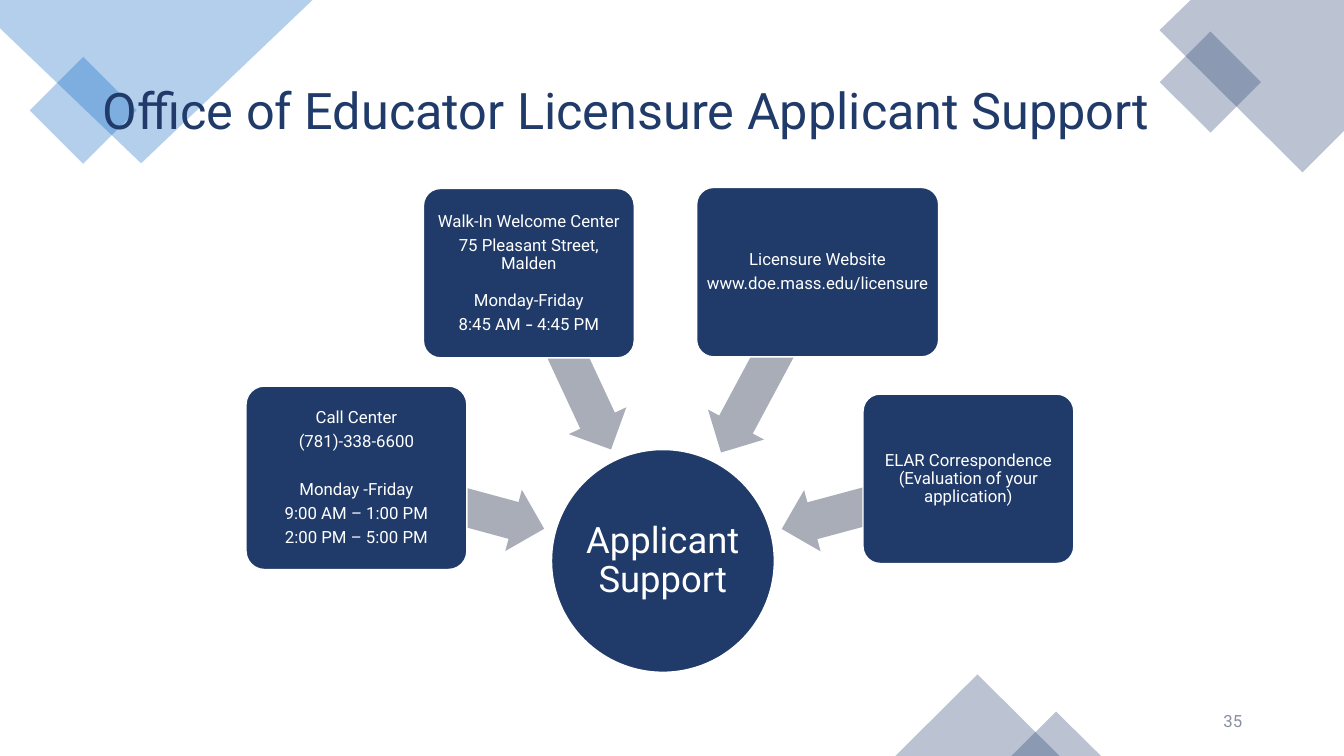
import math

from lxml import etree
from pptx import Presentation
from pptx import util as u
from pptx.dml.color import RGBColor
from pptx.enum import shapes, text
from pptx.oxml.ns import qn

SLIDE_W, SLIDE_H = 13.33, 7.5
NAVY, BLUE, GREY, WHITE, PAGE_GREY = "203B69", "0563C1", "A9ADB8", "FFFFFF", "8A8FA0"
TITLE_NAVY = "203B6A"
LINE_GAP, GROUP_GAP, STREET_GAP = 4.2, 21.3, 13.2  # points before a paragraph

TITLE = "Office of Educator Licensure Applicant Support"
PAGE_NUMBER = "35"
HUB = ("Applicant Support", (5.47, 4.46, 2.21, 2.21))
ARROW_HEIGHT, ARROW_STOP = 0.63, 1.22  # arrows stop this far from the hub's centre

# Each channel: place, then paragraphs of (space before, text)
CHANNELS = [
    ((2.44, 3.83, 2.19, 1.82), [
        (0, "Call Center"), (LINE_GAP, "(781)-338-6600"),
        (GROUP_GAP, "Monday -Friday"), (LINE_GAP, "9:00 AM – 1:00 PM"),
        (LINE_GAP, "2:00 PM – 5:00 PM")]),
    ((4.2, 1.87, 2.09, 1.68), [
        (0, "Walk-In Welcome Center"), (LINE_GAP, "75 Pleasant Street, Malden"),
        (STREET_GAP, "Monday-Friday"), (LINE_GAP, ("8:45 AM ", "– ", "4:45 PM"))]),
    ((6.91, 1.86, 2.4, 1.68), [
        (0, "Licensure Website"), (LINE_GAP, "www.doe.mass.edu/licensure")]),
    ((8.56, 3.91, 2.09, 1.68), [
        (0, "ELAR Correspondence (Evaluation of your application)")]),
]

KIND = shapes.MSO_SHAPE
CORNER_PRESETS = [
    (KIND.RECTANGLE, (0.45, 0.72, 0.75, 0.75), 45, BLUE),
    (KIND.RECTANGLE, (11.65, 0.46, 0.71, 0.71), 45, TITLE_NAVY),
    (KIND.ISOSCELES_TRIANGLE, (8.88, 6.69, 1.63, 0.81), 0, TITLE_NAVY),
    (KIND.ISOSCELES_TRIANGLE, (10.03, 7.06, 0.89, 0.44), 0, TITLE_NAVY),
]
CORNER_OUTLINES = [
    ([(0, 0), (3.1, 0), (1.4, 1.62), (0, 0.28)], BLUE),
    ([(11.81, 0), (SLIDE_W, 0), (SLIDE_W, 1.3), (12.92, 1.71), (11.5, 0.3)], TITLE_NAVY),
]

prs = Presentation()
prs.slide_width, prs.slide_height = u.Inches(SLIDE_W), u.Inches(SLIDE_H)
slide = prs.slides.add_slide(prs.slide_layouts[5])


def rgb(color):
    return RGBColor.from_string(color)


def inches(place):
    return [u.Inches(length) for length in place]


def paint(shape, color, opacity=None, line=None):
    shape.shadow.inherit = False
    shape.fill.solid()
    shape.fill.fore_color.rgb = rgb(color)
    if opacity:
        color_xml = shape.fill._xPr.find(qn("a:solidFill"))[0]
        etree.SubElement(color_xml, qn("a:alpha")).set("val", str(opacity * 1000))
    if line:
        shape.line.color.rgb = rgb(line)
        shape.line.width = u.Pt(1)
    else:
        shape.line.fill.background()


def add_preset(kind, place, color, rotation=0, **look):
    shape = slide.shapes.add_shape(kind, *inches(place))
    shape.rotation = rotation
    paint(shape, color, **look)
    return shape


def write(shape, paragraphs, size, color, align, spacing=0.9, margins=(0.02, 0.02)):
    frame = shape.text_frame
    frame.word_wrap = True
    frame.auto_size = text.MSO_AUTO_SIZE.NONE
    frame.vertical_anchor = text.MSO_ANCHOR.MIDDLE
    frame.margin_left = frame.margin_right = u.Inches(margins[0])
    frame.margin_top = frame.margin_bottom = u.Inches(margins[1])
    for index, (before, words) in enumerate(paragraphs):
        paragraph = frame.add_paragraph() if index else frame.paragraphs[0]
        paragraph.alignment = align
        paragraph.line_spacing = spacing
        paragraph.space_before = u.Pt(before)
        for part in [words] if isinstance(words, str) else words:
            run = paragraph.add_run()
            run.text = part
            dash = part.strip() == "–"
            run.font.name = "Calibri" if dash else "Roboto"
            run.font.bold = dash
            run.font.size = u.Pt(size)
            run.font.color.rgb = rgb(color)


def center(place):
    left, top, width, height = place
    return left + width / 2, top + height / 2


def add_arrow_to_hub(place):
    (x, y), (hub_x, hub_y) = center(place), center(HUB[1])
    length = math.dist((x, y), (hub_x, hub_y)) - ARROW_STOP
    angle = math.atan2(hub_y - y, hub_x - x)
    mid_x = x + length / 2 * math.cos(angle)
    mid_y = y + length / 2 * math.sin(angle)
    arrow = add_preset(
        KIND.LEFT_ARROW,
        (mid_x - length / 2, mid_y - ARROW_HEIGHT / 2, length, ARROW_HEIGHT),
        GREY, rotation=math.degrees(angle) + 180)
    arrow.adjustments[0], arrow.adjustments[1] = 0.6, 0.5


# Corner decoration
for points, color in CORNER_OUTLINES:
    start, *rest = [inches(point) for point in points]
    builder = slide.shapes.build_freeform(*start)
    builder.add_line_segments(rest, close=True)
    paint(builder.convert_to_shape(), color, opacity=30)
for kind, place, rotation, color in CORNER_PRESETS:
    add_preset(kind, place, color, rotation, opacity=30)

# Title, brought in front of the decoration
title = slide.shapes.title
title.left, title.top, title.width, title.height = inches((0.92, 0.4, 11.5, 1.45))
write(title, [(0, TITLE)], 36, TITLE_NAVY, text.PP_ALIGN.LEFT, margins=(0.1, 0.05))
slide.shapes._spTree.append(title._element)

# Hub and the channels that lead to it
hub_text, hub_place = HUB
hub = add_preset(KIND.OVAL, hub_place, NAVY, line=WHITE)
write(hub, [(0, hub_text)], 26, WHITE, text.PP_ALIGN.CENTER)
for place, paragraphs in CHANNELS:
    add_arrow_to_hub(place)
    channel = add_preset(KIND.ROUNDED_RECTANGLE, place, NAVY, line=WHITE)
    channel.adjustments[0] = 0.1
    write(channel, paragraphs, 12, WHITE, text.PP_ALIGN.CENTER)

page = slide.shapes.add_textbox(*inches((9.42, 6.95, 3, 0.4)))
write(page, [(0, PAGE_NUMBER)], 12, PAGE_GREY, text.PP_ALIGN.RIGHT,
      spacing=1.0, margins=(0.1, 0.05))

prs.save("out.pptx")
